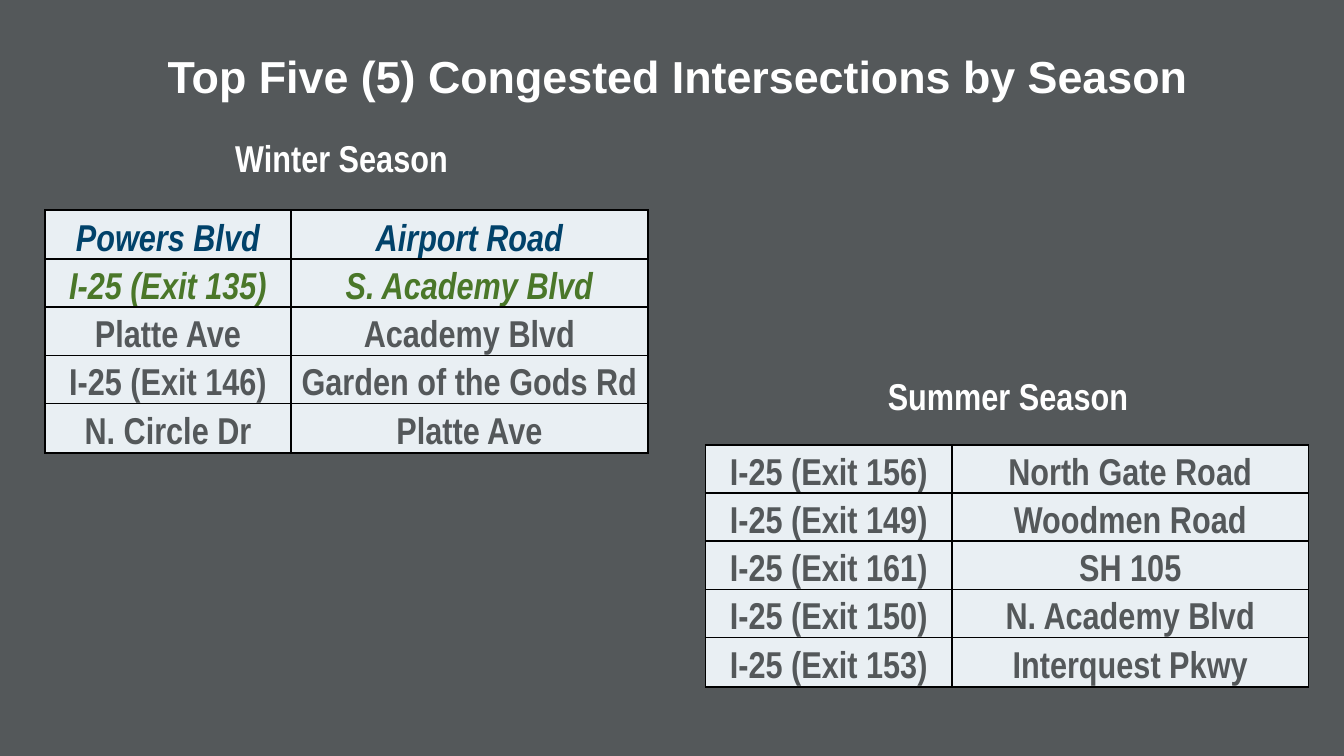
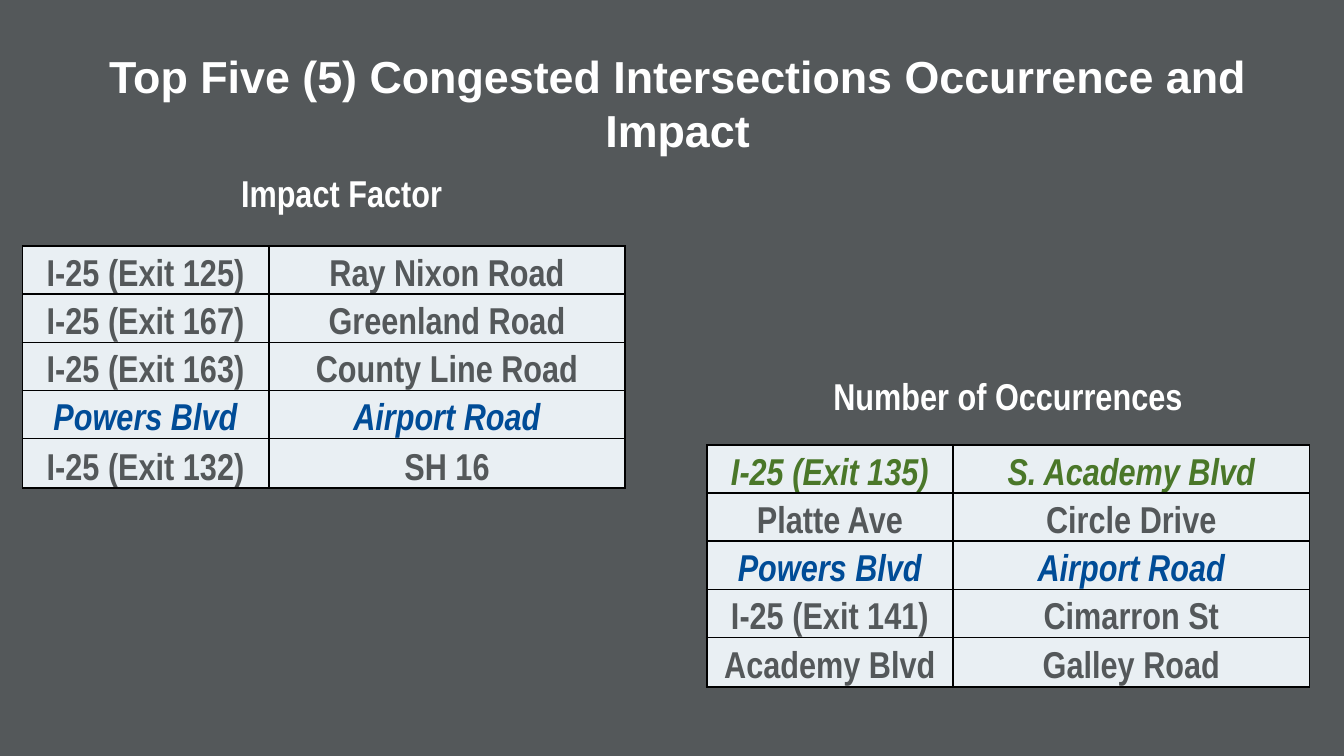
from lxml import etree
from pptx import Presentation
from pptx.dml.color import RGBColor
from pptx.enum.text import MSO_ANCHOR, MSO_AUTO_SIZE, PP_ALIGN
from pptx.oxml.ns import qn
from pptx.util import Pt

CENTER = PP_ALIGN.CENTER
BOTTOM = MSO_ANCHOR.BOTTOM
GROW_TO_TEXT = MSO_AUTO_SIZE.SHAPE_TO_FIT_TEXT

GRAY = RGBColor(0x54, 0x58, 0x5A)
WHITE = RGBColor(0xFF, 0xFF, 0xFF)
BLACK = RGBColor(0x00, 0x00, 0x00)
PALE = RGBColor(0xE9, 0xEF, 0xF3)
NAVY = RGBColor(0x01, 0x42, 0x6A)
BLUE = RGBColor(0x00, 0x4C, 0x97)
GREEN = RGBColor(0x4A, 0x77, 0x29)

TITLE_FONT, TITLE_SIZE = "Arial", 24
BODY_FONT, BODY_SIZE = "Arial Narrow", 20
COLUMN_WIDTHS = (132, 191)
ROW_HEIGHT, EDGE_ROW_HEIGHT = 25.8, 26.4
CELL_MARGIN = 0.7

# Boxes are (left, top, width, height); tables are (left, top).
# "highlights" gives the color of the rows set in italics.
SLIDES = [
    {
        "title": ("Top Five (5) Congested Intersections by Season", (54, 22.5, 618, 36)),
        "rankings": [
            {
                "heading": ("Winter Season", (24, 68.6, 318, 31.5)),
                "table_at": (24, 112.4),
                "tall_rows": (0, 4),
                "highlights": {0: NAVY, 1: GREEN},
                "rows": [
                    ("Powers Blvd", "Airport Road"),
                    ("I-25 (Exit 135)", "S. Academy Blvd"),
                    ("Platte Ave", "Academy Blvd"),
                    ("I-25 (Exit 146)", "Garden of the Gods Rd"),
                    ("N. Circle Dr", "Platte Ave"),
                ],
            },
            {
                "heading": ("Summer Season", (384, 196.5, 312, 31.5)),
                "table_at": (378, 238.4),
                "tall_rows": (4,),
                "highlights": {},
                "rows": [
                    ("I-25 (Exit 156)", "North Gate Road"),
                    ("I-25 (Exit 149)", "Woodmen Road"),
                    ("I-25 (Exit 161)", "SH 105"),
                    ("I-25 (Exit 150)", "N. Academy Blvd"),
                    ("I-25 (Exit 153)", "Interquest Pkwy"),
                ],
            },
        ],
    },
    {
        "title": ("Top Five (5) Congested Intersections Occurrence and Impact",
                  (12, 22.5, 702, 65.5)),
        "rankings": [
            {
                "heading": ("Impact Factor", (24, 87.6, 318, 31.5)),
                "table_at": (12, 131.8),
                "tall_rows": (4,),
                "highlights": {3: BLUE},
                "rows": [
                    ("I-25 (Exit 125)", "Ray Nixon Road"),
                    ("I-25 (Exit 167)", "Greenland Road"),
                    ("I-25 (Exit 163)", "County Line Road"),
                    ("Powers Blvd", "Airport Road"),
                    ("I-25 (Exit 132)", "SH 16"),
                ],
            },
            {
                "heading": ("Number of Occurrences", (384, 196.5, 312, 31.5)),
                "table_at": (378.6, 238.4),
                "tall_rows": (4,),
                "highlights": {0: GREEN, 2: BLUE},
                "rows": [
                    ("I-25 (Exit 135)", "S. Academy Blvd"),
                    ("Platte Ave", "Circle Drive"),
                    ("Powers Blvd", "Airport Road"),
                    ("I-25 (Exit 141)", "Cimarron St"),
                    ("Academy Blvd", "Galley Road"),
                ],
            },
        ],
    },
]


def write_text(text_frame, text, font_name, size, color, italic=False):
    """Fill a text frame with one centered bold line."""
    text_frame.text = text
    paragraph = text_frame.paragraphs[0]
    paragraph.alignment = CENTER
    font = paragraph.runs[0].font
    font.name, font.size, font.bold, font.italic = font_name, Pt(size), True, italic
    font.color.rgb = color


def add_border(cell):
    """Draw all four cell sides; must run before the cell gets its fill."""
    properties = cell._tc.get_or_add_tcPr()
    for side in ("a:lnL", "a:lnR", "a:lnT", "a:lnB"):
        line = etree.SubElement(properties, qn(side), w=str(Pt(1)))
        fill = etree.SubElement(line, qn("a:solidFill"))
        etree.SubElement(fill, qn("a:srgbClr"), val=str(BLACK))


presentation = Presentation()
presentation.slide_width = Pt(720)
presentation.slide_height = Pt(405)
background = presentation.slide_master.background.fill
background.solid()
background.fore_color.rgb = GRAY

for content in SLIDES:
    slide = presentation.slides.add_slide(presentation.slide_layouts[6])

    labels = [(*content["title"], TITLE_FONT, TITLE_SIZE)]
    labels += [(*ranking["heading"], BODY_FONT, BODY_SIZE) for ranking in content["rankings"]]
    for text, box, font_name, size in labels:
        text_frame = slide.shapes.add_textbox(*map(Pt, box)).text_frame
        text_frame.word_wrap = True
        text_frame.auto_size = GROW_TO_TEXT
        write_text(text_frame, text, font_name, size, WHITE)

    for ranking in content["rankings"]:
        rows = ranking["rows"]
        left, top = ranking["table_at"]
        table = slide.shapes.add_table(
            len(rows), len(COLUMN_WIDTHS), Pt(left), Pt(top),
            Pt(sum(COLUMN_WIDTHS)), Pt(ROW_HEIGHT * len(rows))).table
        table.first_row = table.horz_banding = False
        for column, width in zip(table.columns, COLUMN_WIDTHS):
            column.width = Pt(width)

        for row_index, names in enumerate(rows):
            is_tall = row_index in ranking["tall_rows"]
            table.rows[row_index].height = Pt(EDGE_ROW_HEIGHT if is_tall else ROW_HEIGHT)
            color = ranking["highlights"].get(row_index, GRAY)
            for column_index, name in enumerate(names):
                cell = table.cell(row_index, column_index)
                add_border(cell)
                cell.fill.solid()
                cell.fill.fore_color.rgb = PALE
                cell.vertical_anchor = BOTTOM
                cell.margin_left = cell.margin_right = cell.margin_top = Pt(CELL_MARGIN)
                cell.margin_bottom = 0
                write_text(cell.text_frame, name, BODY_FONT, BODY_SIZE, color,
                           italic=color != GRAY)

presentation.save("out.pptx")
